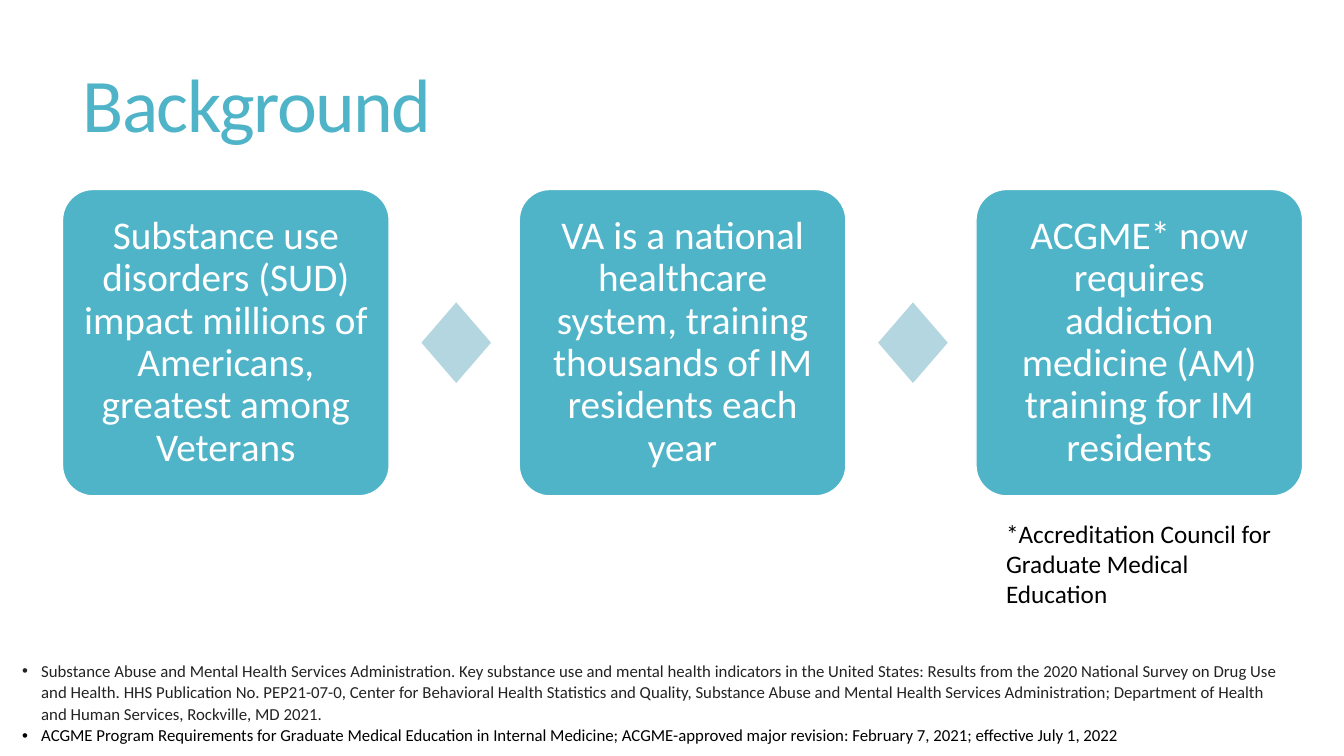
"""Build the Background slide: three linked statement cards with references."""
from dataclasses import dataclass

import pptx
import pptx.dml.color
import pptx.enum.shapes
import pptx.enum.text
import pptx.oxml
import pptx.oxml.ns
import pptx.presentation
import pptx.shapes.base
import pptx.slide
import pptx.text.text
import pptx.util

Inches = pptx.util.Inches
Pt = pptx.util.Pt
RGBColor = pptx.dml.color.RGBColor
Shape = pptx.enum.shapes.MSO_SHAPE
Align = pptx.enum.text.PP_ALIGN
Anchor = pptx.enum.text.MSO_ANCHOR

TEAL = RGBColor(0x50, 0xB4, 0xC8)
PALE_TEAL = RGBColor(0xB3, 0xD6, 0xE0)
WHITE = RGBColor(0xFF, 0xFF, 0xFF)
BLACK = RGBColor(0x00, 0x00, 0x00)
CHARCOAL = RGBColor(0x23, 0x23, 0x23)

FONT = "Calibri"
CARD_LEFT = 0.62
CARD_PITCH = 4.53
DIAMOND_OFFSET = 3.56


@dataclass(frozen=True)
class Reference:
    text: str
    color: RGBColor


STATEMENTS = (
    "Substance use disorders (SUD) impact millions of Americans, greatest among Veterans",
    "VA is a national healthcare system, training thousands of IM residents each year",
    "ACGME* now requires addiction medicine (AM) training for IM residents",
)
REFERENCES = (
    Reference(
        "Substance Abuse and Mental Health Services Administration. Key substance use and "
        "mental health indicators in the United States: Results from the 2020 National Survey "
        "on Drug Use and Health. HHS Publication No. PEP21-07-0, Center for Behavioral Health "
        "Statistics and Quality, Substance Abuse and Mental Health Services Administration; "
        "Department of Health and Human Services, Rockville, MD 2021.",
        CHARCOAL,
    ),
    Reference(
        "ACGME Program Requirements for Graduate Medical Education in Internal Medicine; "
        "ACGME-approved major revision: February 7, 2021; effective July 1, 2022",
        BLACK,
    ),
)


def write(para: pptx.text.text._Paragraph, text: str, size: float, color: RGBColor,
          align: Align = Align.LEFT, spacing: float = 1.0) -> None:
    para.text = text
    para.alignment = align
    para.line_spacing = spacing
    for span in para.runs:
        span.font.name = FONT
        span.font.size = Pt(size)
        span.font.color.rgb = color


def add_bullet(para: pptx.text.text._Paragraph) -> None:
    properties = para._p.get_or_add_pPr()
    properties.set("marL", str(Inches(0.19)))
    properties.set("indent", str(Inches(-0.19)))
    namespace = pptx.oxml.ns.nsdecls("a")
    properties.append(pptx.oxml.parse_xml(f'<a:buFont {namespace} typeface="Arial"/>'))
    properties.append(pptx.oxml.parse_xml(f'<a:buChar {namespace} char="•"/>'))


def add_title(page: pptx.slide.Slide) -> None:
    title = page.shapes.title
    title.left, title.top = Inches(0.72), Inches(0.55)
    title.width, title.height = Inches(11.78), Inches(1.07)
    frame = title.text_frame
    frame.auto_size = pptx.enum.text.MSO_AUTO_SIZE.NONE
    frame.vertical_anchor = Anchor.MIDDLE
    para = frame.paragraphs[0]
    write(para, "Background", 54, TEAL, spacing=0.85)
    para.runs[0]._r.get_or_add_rPr().set("spc", "-120")


def add_card(page: pptx.slide.Slide, left: float, statement: str) -> None:
    card = page.shapes.add_shape(
        Shape.ROUNDED_RECTANGLE, Inches(left), Inches(1.88), Inches(3.24), Inches(3.04))
    card.adjustments[0] = 0.1
    card.shadow.inherit = False
    card.fill.solid()
    card.fill.fore_color.rgb = TEAL
    card.line.color.rgb = WHITE
    card.line.width = Pt(1)
    frame = card.text_frame
    frame.word_wrap = True
    frame.vertical_anchor = Anchor.MIDDLE
    frame.margin_left = frame.margin_right = Inches(0.12)
    frame.margin_top = frame.margin_bottom = Inches(0.12)
    write(frame.paragraphs[0], statement, 28, WHITE, Align.CENTER, 0.9)


def add_diamond(page: pptx.slide.Slide, left: float) -> None:
    diamond = page.shapes.add_shape(
        Shape.FLOWCHART_DECISION, Inches(left), Inches(3), Inches(0.69), Inches(0.8))
    diamond.shadow.inherit = False
    diamond.fill.solid()
    diamond.fill.fore_color.rgb = PALE_TEAL
    diamond.line.fill.background()


def add_text_box(page: pptx.slide.Slide, left: float, top: float, width: float,
                 height: float) -> pptx.text.text.TextFrame:
    box = page.shapes.add_textbox(Inches(left), Inches(top), Inches(width), Inches(height))
    box.text_frame.word_wrap = True
    return box.text_frame


def add_references(page: pptx.slide.Slide) -> None:
    frame = add_text_box(page, 0.12, 6.49, 12.81, 1.18)
    for index, reference in enumerate(REFERENCES):
        para = frame.add_paragraph() if index else frame.paragraphs[0]
        write(para, reference.text, 12, reference.color, spacing=1.07)
        add_bullet(para)


def main() -> None:
    deck = pptx.Presentation()
    deck.slide_width, deck.slide_height = Inches(13.33), Inches(7.5)
    page = deck.slides.add_slide(deck.slide_layouts.get_by_name("Title Only"))
    add_title(page)
    for index, statement in enumerate(STATEMENTS):
        left = CARD_LEFT + index * CARD_PITCH
        add_card(page, left, statement)
        if index < len(STATEMENTS) - 1:
            add_diamond(page, left + DIAMOND_OFFSET)
    footnote = add_text_box(page, 9.88, 5.09, 3.05, 0.71)
    write(footnote.paragraphs[0],
          "*Accreditation Council for Graduate Medical Education", 18, BLACK)
    add_references(page)
    deck.save("out.pptx")


if __name__ == "__main__":
    main()
